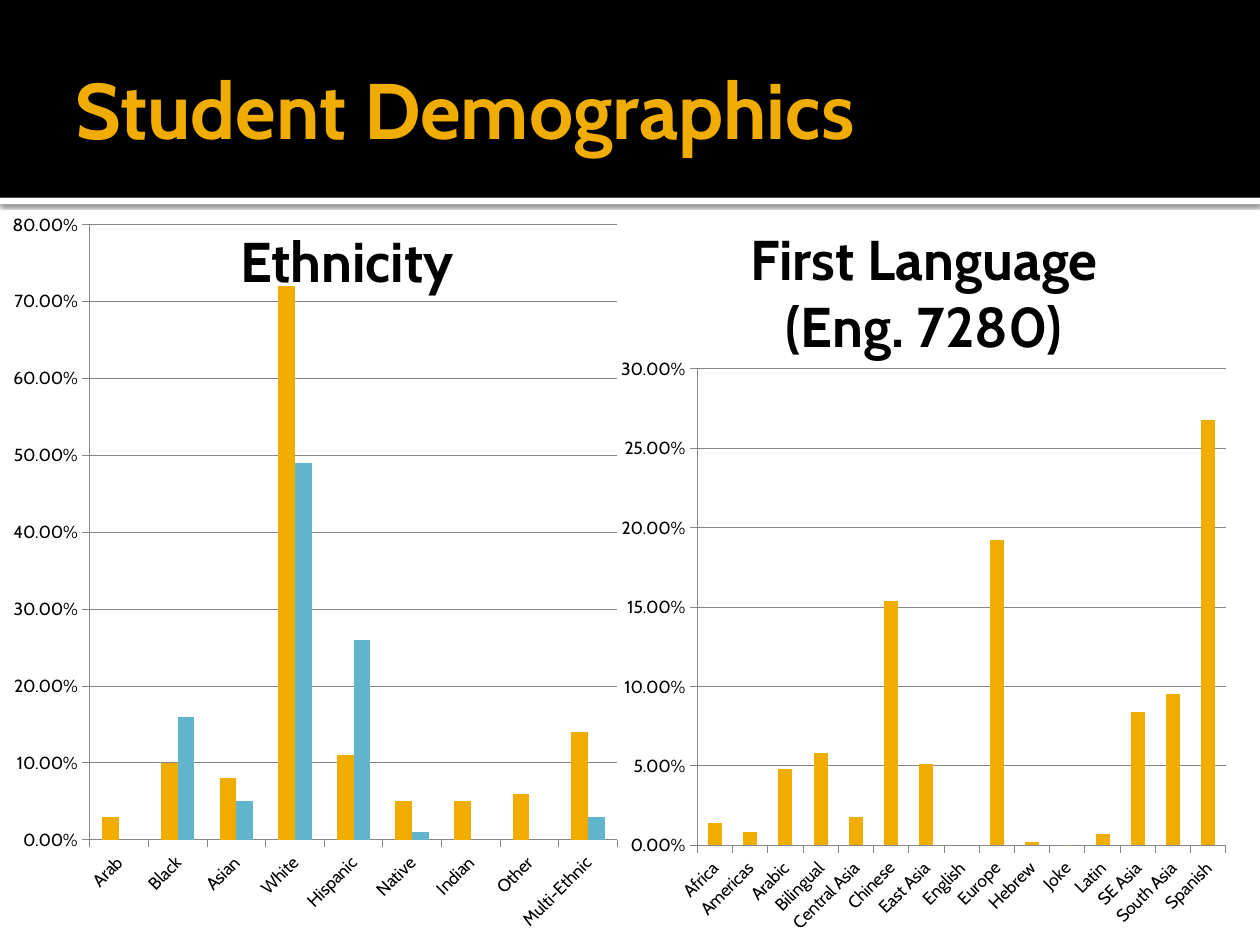
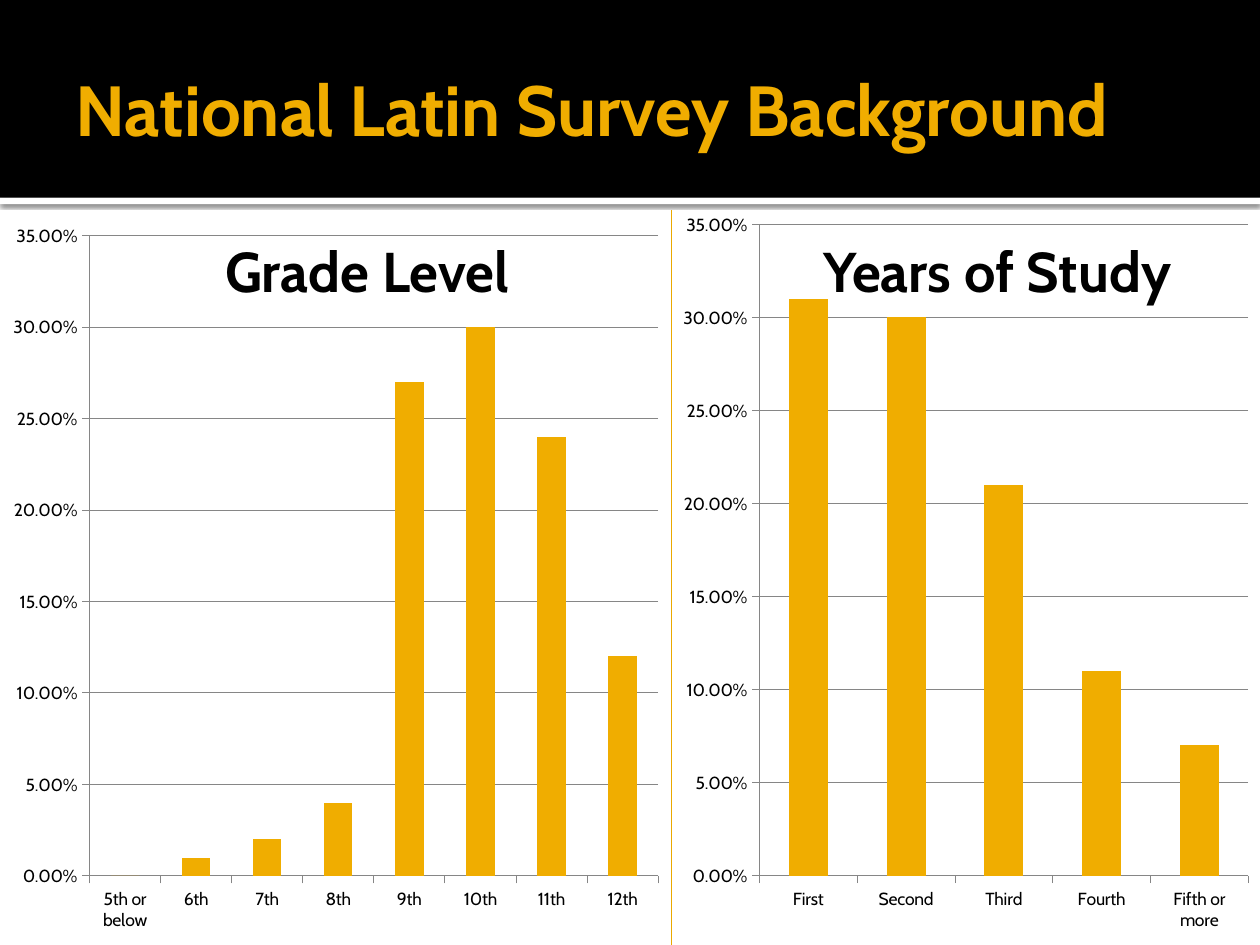
from dataclasses import dataclass
from lxml.etree import Element, SubElement
from pptx import Presentation
from pptx.chart.data import CategoryChartData
from pptx.dml.color import RGBColor
from pptx.enum.chart import XL_CHART_TYPE, XL_TICK_MARK
from pptx.enum.shapes import MSO_CONNECTOR, MSO_SHAPE
from pptx.enum.text import MSO_ANCHOR, PP_ALIGN
from pptx.oxml.ns import qn
from pptx.util import Inches, Pt


@dataclass(frozen=True)
class Theme:
    face: str = "Cabin"
    black: RGBColor = RGBColor(0, 0, 0)
    white: RGBColor = RGBColor(255, 255, 255)
    gold: RGBColor = RGBColor(0xF0, 0xAD, 0x00)
    blue: RGBColor = RGBColor(0x60, 0xB5, 0xCC)
    rule: RGBColor = RGBColor(0xEB, 0xA9, 0x00)
    grid: RGBColor = RGBColor(0x86, 0x86, 0x86)
    head: float = 32
    tick: float = 10


theme = Theme()
percent = "0.00%"

pages = [
    dict(
        title="Student Demographics", size=45, split=None,
        charts=[
            dict(at=(0, 1.58, 5, 5.92), top=0.8, step=0.1,
                 cats=["Arab", "Black", "Asian", "White", "Hispanic",
                       "Native", "Indian", "Other", "Multi-Ethnic"],
                 rows=[[0.03, 0.1, 0.08, 0.72, 0.11, 0.05, 0.05, 0.06, 0.14],
                       [None, 0.16, 0.05, 0.49, 0.26, 0.01, None, None, 0.03]]),
            dict(at=(4.83, 2.75, 5, 4.75), top=0.3, step=0.05,
                 cats=["Africa", "Americas", "Arabic", "Bilingual", "Central Asia",
                       "Chinese", "East Asia", "English", "Europe", "Hebrew",
                       "Joke", "Latin", "SE Asia", "South Asia", "Spanish"],
                 rows=[[0.014, 0.008, 0.048, 0.058, 0.018, 0.154, 0.051, None,
                        0.192, 0.002, 0, 0.007, 0.084, 0.095, 0.268]]),
        ],
        heads=[((0.92, 1.75, 3.67, 0.64), ["Ethnicity"]),
               ((5.5, 1.73, 3.67, 1.18), ["First Language", "(Eng. 7280)"])],
    ),
    dict(
        title="National Latin Survey Background", size=40.5, split=5.33,
        charts=[
            dict(at=(0, 1.67, 5.33, 5.83), top=0.35, step=0.05,
                 cats=["5th or below", "6th", "7th", "8th",
                       "9th", "10th", "11th", "12th"],
                 rows=[[0, 0.01, 0.02, 0.04, 0.27, 0.3, 0.24, 0.12]]),
            dict(at=(5.33, 1.58, 4.67, 5.92), top=0.35, step=0.05,
                 cats=["First", "Second", "Third", "Fourth", "Fifth or more"],
                 rows=[[0.31, 0.3, 0.21, 0.11, 0.07]]),
        ],
        heads=[((1.08, 1.83, 3.67, 0.64), ["Grade Level"]),
               ((6.08, 1.83, 3.67, 0.64), ["Years of Study"])],
    ),
]


def add_text(slide, box, lines, size, color, align):
    frame = slide.shapes.add_textbox(*map(Inches, box)).text_frame
    frame.word_wrap = True
    frame.text = "\n".join(lines)
    for para in frame.paragraphs:
        para.alignment = align
        font = para.font
        font.name, font.size, font.bold = theme.face, Pt(size), True
        font.color.rgb = color
    return frame


def add_columns(slide, part):
    data = CategoryChartData(number_format=percent)
    data.categories = part["cats"]
    for num, row in enumerate(part["rows"], 1):
        data.add_series(f"Series {num}", row)
    chart = slide.shapes.add_chart(
        XL_CHART_TYPE.COLUMN_CLUSTERED, *map(Inches, part["at"]), data).chart
    chart.has_legend = chart.has_title = False
    chart.font.name, chart.font.size = theme.face, Pt(theme.tick)
    chart.font.color.rgb = theme.black
    clear = Element(qn("c:spPr"))
    SubElement(clear, qn("a:noFill"))
    SubElement(SubElement(clear, qn("a:ln")), qn("a:noFill"))
    chart.element.find(qn("c:txPr")).addprevious(clear)
    plot = chart.plots[0]
    plot.gap_width = 150
    plot.vary_by_categories = False
    for row, color in zip(plot.series, (theme.gold, theme.blue)):
        row.format.fill.solid()
        row.format.fill.fore_color.rgb = color
    scale = chart.value_axis
    scale.minimum_scale, scale.maximum_scale = 0, part["top"]
    scale.major_unit = part["step"]
    scale.has_major_gridlines = True
    scale.tick_labels.number_format = percent
    scale.tick_labels.number_format_is_linked = False
    for axis in (chart.category_axis, scale):
        axis.major_tick_mark = XL_TICK_MARK.OUTSIDE
    for stroke in (chart.category_axis.format.line, scale.format.line,
                   scale.major_gridlines.format.line):
        stroke.color.rgb = theme.grid
        stroke.width = Pt(0.5)


deck = Presentation()
deck.slide_width, deck.slide_height = Inches(10), Inches(7.5)

for page in pages:
    slide = deck.slides.add_slide(deck.slide_layouts[6])
    for top, height, color in ((1.57, 0.05, theme.white), (0, 1.57, theme.black)):
        band = slide.shapes.add_shape(
            MSO_SHAPE.RECTANGLE, 0, Inches(top), Inches(10), Inches(height))
        band.shadow.inherit = False
        band.fill.solid()
        band.fill.fore_color.rgb = color
        band.line.fill.background()
        if color == theme.white:
            glow = SubElement(
                band.element.spPr.find(qn("a:effectLst")), qn("a:outerShdw"),
                blurRad=str(Pt(2.5)), dist=str(Pt(0.8)), dir="5400000",
                algn="t", rotWithShape="0")
            shade = SubElement(glow, qn("a:srgbClr"), val=str(theme.black))
            SubElement(shade, qn("a:alpha"), val="60000")

    title = add_text(slide, (0.5, 0.17, 9, 1.37), [page["title"]],
                     page["size"], theme.gold, PP_ALIGN.LEFT)
    title.vertical_anchor = MSO_ANCHOR.MIDDLE
    title.margin_right = Inches(0.05)

    if page["split"]:
        mid = Inches(page["split"])
        rule = slide.shapes.add_connector(
            MSO_CONNECTOR.STRAIGHT, mid, Inches(1.67), mid, Inches(7.5))
        rule.line.color.rgb = theme.rule
        rule.line.width = Pt(0.5)
        SubElement(rule.element.spPr, qn("a:effectLst"))

    for part in page["charts"]:
        add_columns(slide, part)
    for box, lines in page["heads"]:
        add_text(slide, box, lines, theme.head, theme.black, PP_ALIGN.CENTER)

deck.save("out.pptx")
